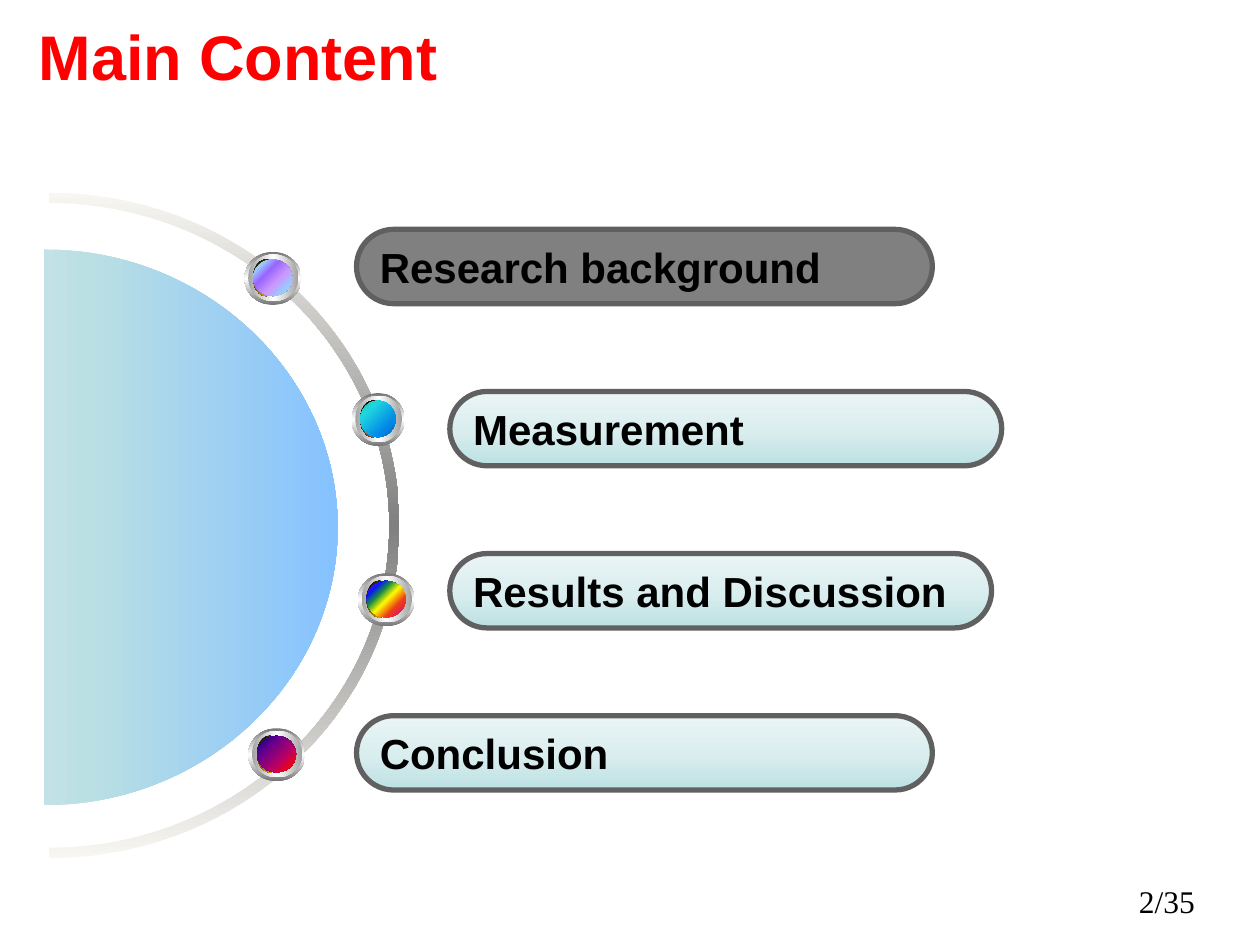
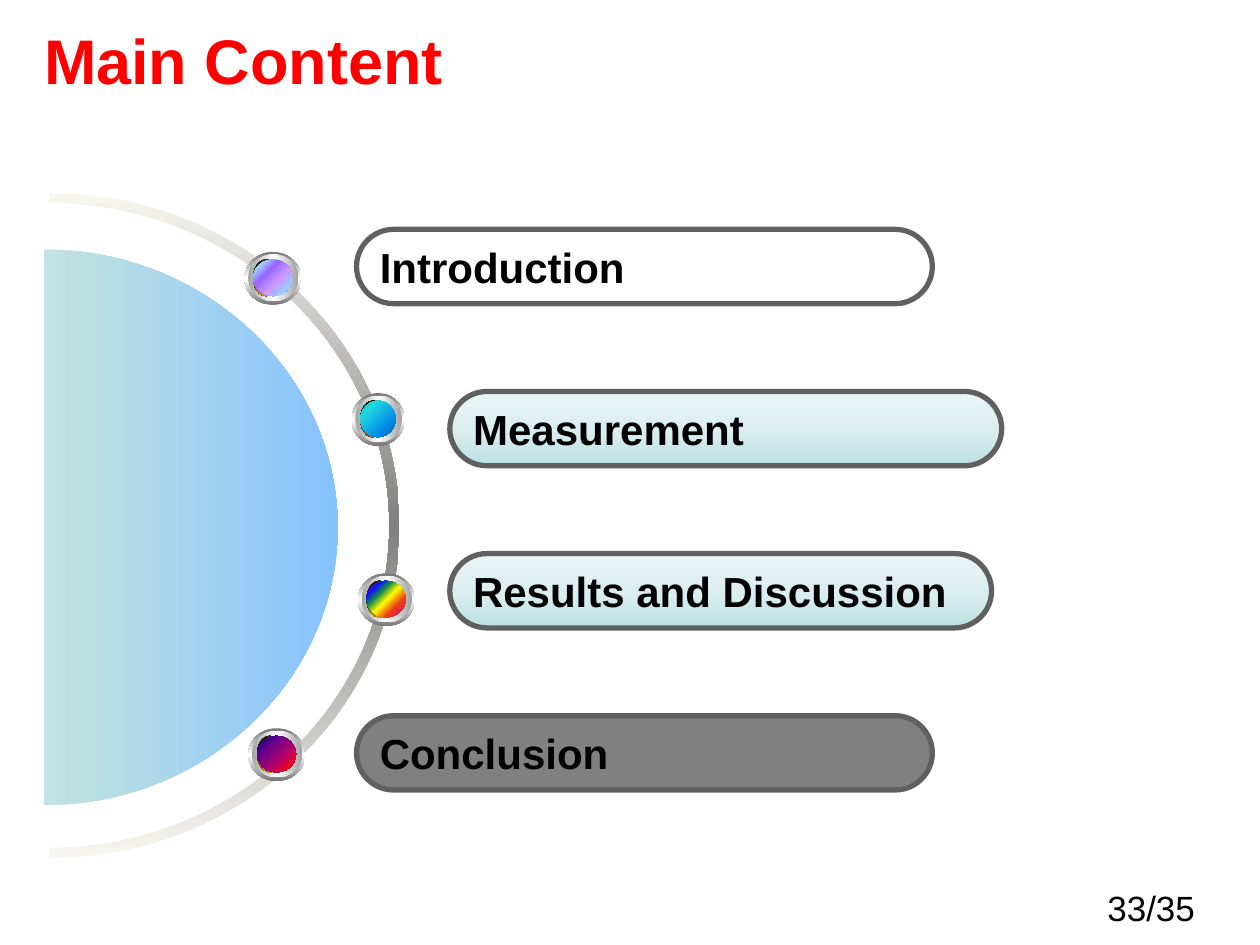
from pptx import Presentation
from pptx.dml.color import RGBColor
from pptx.enum.shapes import MSO_SHAPE
from pptx.enum.text import MSO_ANCHOR, MSO_AUTO_SIZE, PP_ALIGN
from pptx.oxml.ns import qn
from pptx.util import Inches, Pt
from lxml.etree import SubElement


def stops(*pairs):
    """Turn (percent, hex) pairs into gradient stops."""
    return [(percent, RGBColor.from_string(color)) for percent, color in pairs]


RED = RGBColor(0xFF, 0x00, 0x00)
BLACK = RGBColor(0x00, 0x00, 0x00)
GRAY = RGBColor(0x80, 0x80, 0x80)
OUTLINE = RGBColor(0x60, 0x60, 0x60)

ARC_FADE = stops((0, "F7F6F1"), (50, "808080"), (100, "F7F6F1"))
DISC_FADE = stops((0, "C3E1E6"), (14, "BBE0E3"), (100, "85C2FF"))
PILL_FADE = stops((0, "BBE0E3"), (48, "DBEEEF"), (100, "E9F4F5"))
BEZEL = stops((0, "767676"), (50, "FFFFFF"), (100, "767676"))
RIM = stops((0, "A2A2A2"), (50, "FFFFFF"), (100, "A2A2A2"))
GLINT = stops((0, "FFFFFF"), (50, "009999"), (100, "FFFFFF"))
TEAL = stops((0, "007575"), (50, "009999"), (100, "007575"))
GOLD_SHADE = stops((0, "000000"), (100, "FFCC00"))
ORANGE_SHADE = stops((0, "000000"), (100, "E35E23"))
LILAC = stops((0, "CCCCFF"), (18, "99CCFF"), (36, "9966FF"),
              (61, "CC99FF"), (82, "99CCFF"), (100, "CCCCFF"))
OCEAN = stops((0, "03D4A8"), (25, "21D6E0"), (75, "0087E6"), (100, "005CBF"))
RAINBOW = stops((0, "A603AB"), (21, "0819FB"), (35, "1A8D48"), (52, "FFFF00"),
                (73, "EE3F17"), (88, "E81766"), (100, "A603AB"))
SUNSET = stops((0, "000082"), (30, "66008F"), (65, "BA0066"),
               (90, "FF0000"), (100, "FF8200"))

BEADS = [
    ((1.94, 2.00, 0.45, 0.42), LILAC, GOLD_SHADE),
    ((2.79, 3.12, 0.42, 0.42), OCEAN, ORANGE_SHADE),
    ((2.84, 4.55, 0.45, 0.42), RAINBOW, GOLD_SHADE),
    ((1.97, 5.78, 0.45, 0.42), SUNSET, GOLD_SHADE),
]
PILL_SPANS = [(2.83, 4.57), (3.57, 4.38), (3.57, 4.30), (2.83, 4.57)]
PILL_TOP, PILL_BOTTOM_TOP, PILL_HEIGHT = 1.82, 5.68, 0.59
PILL_STEP = (PILL_BOTTOM_TOP - PILL_TOP) / (len(PILL_SPANS) - 1)
CURVE_PULL = 0.55


def inches(box):
    """Convert a box of numbers to lengths."""
    return [Inches(value) for value in box]


def fill_gradient(shape, gradient, angle):
    """Fill a shape with a linear gradient running clockwise from rightwards."""
    shape.fill.gradient()
    shape.fill.gradient_angle = -angle % 360
    stop_list = shape.element.spPr.find(qn("a:gradFill")).find(qn("a:gsLst"))
    for stop in list(stop_list):
        stop_list.remove(stop)
    for percent, color in gradient:
        stop = SubElement(stop_list, qn("a:gs"), pos=str(percent * 1000))
        SubElement(stop, qn("a:srgbClr"), val=str(color))


def format_text(shape, text, name, size, color, bold=False):
    """Write one line of text and set its font."""
    paragraph = shape.text_frame.paragraphs[0]
    paragraph.text = text
    paragraph.alignment = PP_ALIGN.LEFT
    font = paragraph.runs[0].font
    font.name, font.size, font.bold = name, Pt(size), bold
    font.color.rgb = color
    return paragraph


def right_arc(center, radii, reverse=False):
    """Return the start and two cubic curves of a half ellipse, top to bottom."""
    pull = CURVE_PULL
    units = [(0, -1), (pull, -1), (1, -pull), (1, 0), (1, pull), (pull, 1), (0, 1)]
    points = [(Inches(center[0] + radii[0] * x), Inches(center[1] + radii[1] * y))
              for x, y in units]
    return points[::-1] if reverse else points


def add_outline(slide, points, pieces, gradient, angle):
    """Draw a closed outline whose pieces are curves (C) or lines (L)."""
    builder = slide.shapes.build_freeform(*points[0])
    builder.add_line_segments(points[1:], close=True)
    shape = builder.convert_to_shape()
    segments = iter(list(shape.element.iter(qn("a:lnTo"))))
    for piece in pieces:
        segment = next(segments)
        if piece == "C":
            segment.tag = qn("a:cubicBezTo")
            for extra in (next(segments), next(segments)):
                segment.append(extra[0])
                extra.getparent().remove(extra)
    shape.shadow.inherit = False
    shape.line.fill.background()
    fill_gradient(shape, gradient, angle)


def add_ring(slide, box, band):
    """Draw a half ring that fills the box."""
    left, top, width, height = box
    center = (left, top + height / 2)
    outer = right_arc(center, (width, height / 2))
    inner = right_arc(center, (width - band, height / 2 - band), reverse=True)
    add_outline(slide, outer + inner, "CCLCC", ARC_FADE, 90)


def add_half_disc(slide, box):
    """Draw a half disc that fills the box."""
    left, top, width, height = box
    points = right_arc((left, top + height / 2), (width, height / 2))
    add_outline(slide, points, "CC", DISC_FADE, 0)


def add_bead(slide, box, core, shade):
    """Draw a glossy bead of stacked ellipses in the box."""
    left, top, width, height = box
    core_box = (left + 0.07, top + 0.06, width - 0.14, height - 0.13)
    shade_box = (left + 0.07, top + 0.06, 0.2, height - 0.13)
    rim_box = (left + 0.03, top + 0.02, width - 0.05, height - 0.05)
    layers = [(box, BEZEL, 90), (rim_box, RIM, 0), (shade_box, GLINT, 45),
              (shade_box, shade, 45), (core_box, TEAL, 315), (core_box, core, 45)]
    group = slide.shapes.add_group_shape()
    for layer_box, gradient, angle in layers:
        ellipse = group.shapes.add_shape(MSO_SHAPE.OVAL, *inches(layer_box))
        ellipse.shadow.inherit = False
        ellipse.line.fill.background()
        fill_gradient(ellipse, gradient, angle)


def add_pill(slide, box, text, fill):
    """Draw a rounded label filled with a gradient, a colour or nothing."""
    pill = slide.shapes.add_shape(MSO_SHAPE.ROUNDED_RECTANGLE, *inches(box))
    pill.adjustments[0] = 0.5
    pill.shadow.inherit = False
    pill.line.color.rgb = OUTLINE
    pill.line.width = Pt(3)
    if fill is None:
        pill.fill.background()
    elif fill is PILL_FADE:
        fill_gradient(pill, fill, 270)
    else:
        pill.fill.solid()
        pill.fill.fore_color.rgb = fill
    pill.text_frame.word_wrap = False
    pill.text_frame.vertical_anchor = MSO_ANCHOR.MIDDLE
    format_text(pill, text, "Arial", 24, BLACK, bold=True)


def add_title(slide, box, alignment):
    """Place and format the slide title."""
    title = slide.shapes.title
    title.left, title.top, title.width, title.height = inches(box)
    frame = title.text_frame
    frame.auto_size = MSO_AUTO_SIZE.NONE
    frame.word_wrap = True
    frame.vertical_anchor = MSO_ANCHOR.TOP
    frame.margin_left = frame.margin_right = Inches(0.15)
    frame.margin_top = frame.margin_bottom = Inches(0.08)
    paragraph = format_text(title, "Main Content", "Arial", 36, RED, bold=True)
    paragraph.alignment = alignment


def add_page_number(slide, box, text, name, size):
    """Write the page count in the box."""
    number = slide.shapes.add_textbox(*inches(box))
    number.text_frame.word_wrap = True
    format_text(number, text, name, size, BLACK)


def add_contents_slide(presentation, title, page, pills):
    """Build a contents slide with one bead and one pill per topic."""
    slide = presentation.slides.add_slide(presentation.slide_layouts[5])
    add_title(slide, *title)
    add_ring(slide, (0.39, 1.53, 2.78, 5.28), 0.08)
    for row, ((left, width), (text, fill)) in enumerate(zip(PILL_SPANS, pills)):
        box = (left, PILL_TOP + row * PILL_STEP, width, PILL_HEIGHT)
        add_pill(slide, box, text, fill)
    for bead in BEADS:
        add_bead(slide, *bead)
    add_half_disc(slide, (0.35, 1.98, 2.33, 4.41))
    add_page_number(slide, *page)


def main():
    """Build and save the presentation."""
    presentation = Presentation()
    presentation.slide_width, presentation.slide_height = Inches(10), Inches(7.5)
    middle_pills = [("Measurement", PILL_FADE), ("Results and Discussion", PILL_FADE)]
    add_contents_slide(
        presentation,
        ((-0.12, 0.06, 4.02, 0.76), PP_ALIGN.CENTER),
        ((8.94, 6.95, 0.8, 0.4), "2/35", "Times New Roman", 18),
        [("Research background", GRAY), *middle_pills, ("Conclusion", PILL_FADE)])
    add_contents_slide(
        presentation,
        ((0.2, 0.09, 3.94, 0.76), PP_ALIGN.LEFT),
        ((8.69, 6.99, 0.94, 0.38), "33/35", "Arial", 20),
        [("Introduction", None), *middle_pills, ("Conclusion", GRAY)])
    presentation.save("out.pptx")


if __name__ == "__main__":
    main()
